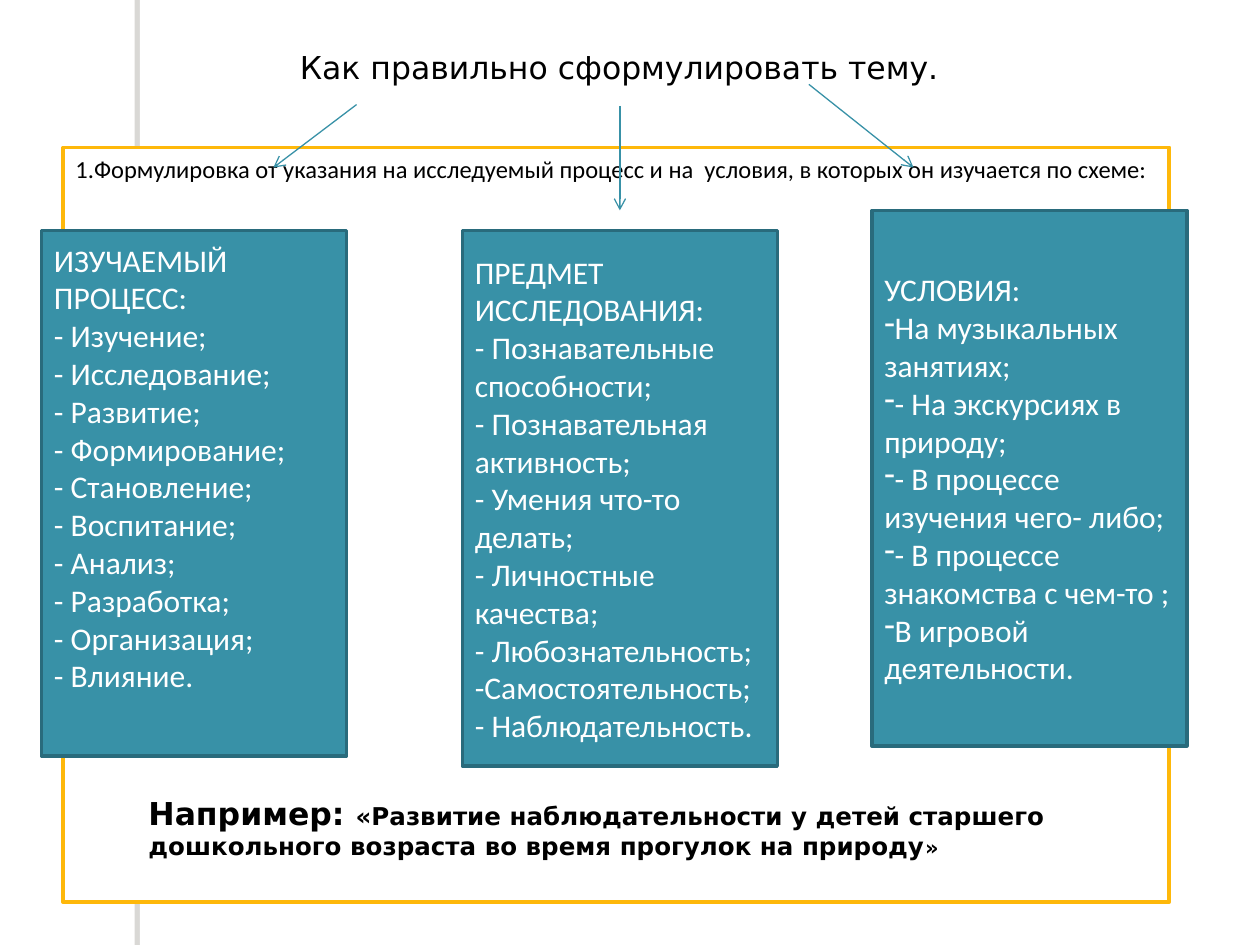
from dataclasses import dataclass

from lxml import etree
from pptx import Presentation
from pptx import util as u
from pptx.dml.color import RGBColor
from pptx.enum import shapes, text
from pptx.oxml import ns


@dataclass(frozen=True)
class Theme:
    white: str = "FFFFFF"
    black: str = "000000"
    teal: str = "3891A7"
    teal_dark: str = "296B7C"
    amber: str = "FEB80A"
    shadow: str = "706B5F"
    heading_font: str = "DejaVu Sans"
    body_font: str = "Calibri"
    large: float = 18
    medium: float = 14
    small: float = 12


THEME = Theme()


@dataclass(frozen=True)
class Box:
    left: float
    top: float
    width: float
    height: float

    def lengths(self) -> list:
        return [u.Inches(v) for v in (self.left, self.top, self.width, self.height)]


@dataclass(frozen=True)
class Run:
    words: str
    size: float
    font: str
    color: str
    bold: bool = False


@dataclass(frozen=True)
class Card:
    box: Box
    heading: str
    items: tuple
    bullet: str = ""
    bottom_margin: float = 0.05


@dataclass(frozen=True)
class Arrow:
    start: tuple
    end: tuple


CARDS = (
    Card(Box(0.33, 1.83, 2.42, 4.17), "ИЗУЧАЕМЫЙ ПРОЦЕСС:",
         ("- Изучение;", "- Исследование;", "- Развитие;", "- Формирование;",
          "- Становление;", "- Воспитание;", "- Анализ;", "- Разработка;",
          "- Организация;", "- Влияние."), bottom_margin=0.46),
    Card(Box(3.67, 1.83, 2.5, 4.25), "ПРЕДМЕТ ИССЛЕДОВАНИЯ:",
         ("- Познавательные способности;", "- Познавательная активность;",
          "- Умения что-то делать;", "- Личностные качества;",
          "- Любознательность;", "-Самостоятельность;", "- Наблюдательность.")),
    Card(Box(6.92, 1.67, 2.5, 4.25), "УСЛОВИЯ:",
         ("На музыкальных занятиях;", "- На экскурсиях в природу;",
          "- В процессе изучения чего- либо;",
          "- В процессе знакомства с чем-то ;", "В игровой деятельности."),
         bullet="-"),
)
ARROWS = (
    Arrow((2.83, 0.83), (2.17, 1.33)),
    Arrow((4.92, 0.84), (4.92, 1.67)),
    Arrow((6.42, 0.67), (7.25, 1.33)),
)


def rgb(color: str) -> RGBColor:
    return RGBColor.from_string(color)


def set_all(target, values: dict) -> None:
    for name, value in values.items():
        setattr(target, name, value)


def add_rectangle(slide, box: Box, fill: str, line: str = ""):
    shape = slide.shapes.add_shape(shapes.MSO_SHAPE.RECTANGLE, *box.lengths())
    shape.shadow.inherit = False
    shape.fill.solid()
    shape.fill.fore_color.rgb = rgb(fill)
    if line:
        shape.line.color.rgb = rgb(line)
        shape.line.width = u.Pt(2)
    else:
        shape.line.fill.background()
    return shape


def write_paragraph(paragraph, runs: list) -> None:
    paragraph.alignment = text.PP_ALIGN.LEFT
    for item in runs:
        run = paragraph.add_run()
        run.text = item.words
        set_all(run.font, {"size": u.Pt(item.size), "name": item.font, "bold": item.bold})
        run.font.color.rgb = rgb(item.color)


def add_text(slide, box: Box, runs: list, margin_left: float = 0.1) -> None:
    frame = slide.shapes.add_textbox(*box.lengths()).text_frame
    set_all(frame, {"word_wrap": True, "margin_left": u.Inches(margin_left),
                    "auto_size": text.MSO_AUTO_SIZE.SHAPE_TO_FIT_TEXT})
    write_paragraph(frame.paragraphs[0], runs)


def add_side_band(slide) -> None:
    band = add_rectangle(slide, Box(1.11, 0, 0.08, 7.5), THEME.white)
    effects = band._element.spPr.find(ns.qn("a:effectLst"))
    shadow = etree.SubElement(effects, ns.qn("a:outerShdw"),
                              dist=str(u.Pt(3)), dir="10800000", rotWithShape="0")
    color = etree.SubElement(shadow, ns.qn("a:srgbClr"), val=THEME.shadow)
    etree.SubElement(color, ns.qn("a:alpha"), val="25000")


def add_arrow(slide, arrow: Arrow) -> None:
    points = [u.Inches(v) for v in arrow.start + arrow.end]
    connector = slide.shapes.add_connector(shapes.MSO_CONNECTOR.STRAIGHT, *points)
    connector.line.color.rgb = rgb(THEME.teal)
    connector.line.width = u.Pt(0.75)
    etree.SubElement(connector.line._get_or_add_ln(), ns.qn("a:tailEnd"), type="arrow")
    etree.SubElement(connector._element.spPr, ns.qn("a:effectLst"))


def add_card(slide, card: Card) -> None:
    frame = add_rectangle(slide, card.box, THEME.teal, THEME.teal_dark).text_frame
    set_all(frame, {"word_wrap": True, "vertical_anchor": text.MSO_ANCHOR.MIDDLE,
                    "margin_bottom": u.Inches(card.bottom_margin)})
    for index, words in enumerate((card.heading,) + card.items):
        paragraph = frame.add_paragraph() if index else frame.paragraphs[0]
        if card.bullet and index:
            properties = paragraph._p.get_or_add_pPr()
            etree.SubElement(properties, ns.qn("a:buChar"), char=card.bullet)
        write_paragraph(paragraph, [Run(words, THEME.large, THEME.body_font, THEME.white)])


def main() -> None:
    presentation = Presentation()
    presentation.slide_width, presentation.slide_height = u.Inches(10), u.Inches(7.5)
    slide = presentation.slides.add_slide(presentation.slide_layouts[6])

    # Side band and title
    add_side_band(slide)
    add_text(slide, Box(1.25, 0.33, 8.58, 0.71),
             [Run("Как правильно сформулировать тему.", THEME.large,
                  THEME.heading_font, THEME.black)], margin_left=1.13)

    # Outlined frame with the rule
    frame = add_rectangle(slide, Box(0.5, 1.17, 8.78, 5.99), THEME.white, THEME.amber).text_frame
    set_all(frame, {"word_wrap": False, "vertical_anchor": text.MSO_ANCHOR.TOP})
    write_paragraph(frame.paragraphs[0], [
        Run("1.Формулировка от указания на исследуемый процесс и на  условия, "
            "в которых он изучается по схеме:", THEME.medium, THEME.body_font, THEME.black)])

    # Arrows and the three cards
    for arrow in ARROWS:
        add_arrow(slide, arrow)
    for card in CARDS:
        add_card(slide, card)

    # Example
    example = (("Например: ", THEME.large),
               ("«Развитие наблюдательности у детей старшего дошкольного возраста "
                "во время прогулок на природу", THEME.medium),
               ("»", THEME.small))
    add_text(slide, Box(1.08, 6.25, 8, 0.64),
             [Run(words, size, THEME.heading_font, THEME.black, True) for words, size in example])

    presentation.save("out.pptx")


if __name__ == "__main__":
    main()
